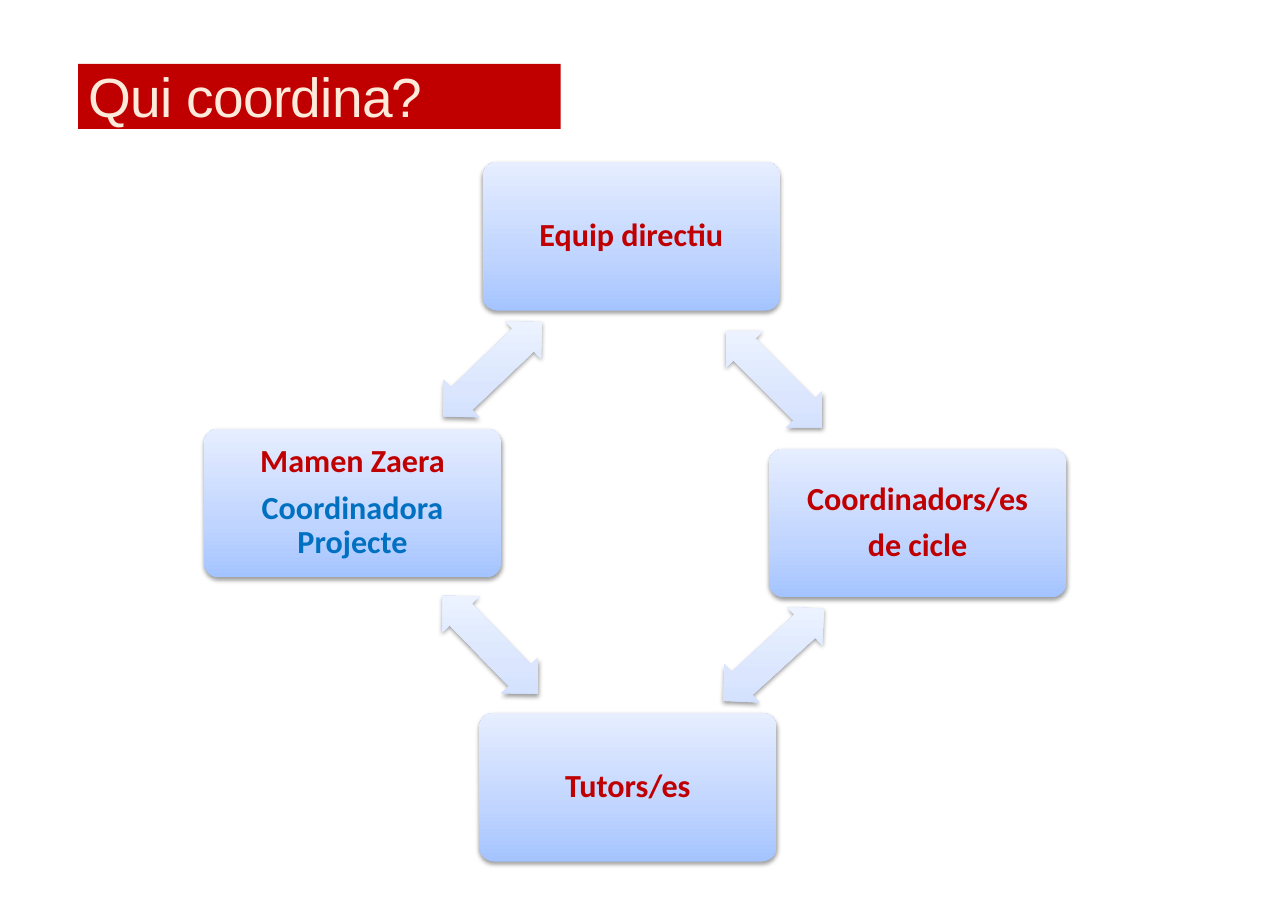
from lxml.etree import SubElement
from pptx import Presentation
from pptx.dml.color import RGBColor as Rgb
from pptx.enum.shapes import MSO_SHAPE as Preset
from pptx.enum.text import MSO_ANCHOR as Anchor, MSO_AUTO_SIZE as AutoSize, PP_ALIGN as Align
from pptx.oxml.ns import qn
from pptx.util import Cm, Pt

COLORS = {"red": "C00000", "cream": "FDEADA", "blue": "0070C0", "shadow": "000000"}
# Gradient stops, from the bottom edge to the top
ROLE_STOPS = {0: "A4C4FF", 35: "BFD4FF", 100: "E6EEFF"}
LINK_STOPS = {0: "CDDDFE", 35: "DBE6FE", 100: "F0F5FF"}


class CoordinationSlide:
    role_size = Cm(6.86), Cm(3.43)
    link_size = Cm(3.15), Cm(1.19)

    def __init__(self, deck):
        self.slide = deck.slides.add_slide(deck.slide_layouts[5])

    def add_words(self, paragraph, text, font, size, color, bold=False):
        run = paragraph.add_run()
        run.text = text
        run.font.name, run.font.size, run.font.bold = font, Pt(size), bold
        run.font.color.rgb = Rgb.from_string(COLORS[color])
        return run

    def title(self, text):
        title = self.slide.shapes.title
        title.left, title.top, title.width, title.height = Cm(1.8), Cm(1.47), Cm(11.13), Cm(1.5)
        title.fill.solid()
        title.fill.fore_color.rgb = Rgb.from_string(COLORS["red"])
        frame = title.text_frame
        frame.auto_size, frame.vertical_anchor = AutoSize.NONE, Anchor.TOP
        frame.margin_left = Cm(0.25)
        frame.margin_top = frame.margin_right = frame.margin_bottom = 0
        heading = frame.paragraphs[0]
        heading.alignment, heading.line_spacing = Align.LEFT, Pt(42.2)
        run = self.add_words(heading, text, "Arial", 36, "cream")
        run._r.get_or_add_rPr().set("spc", "-50")

    def glossy(self, preset, left, top, size, stops):
        """Add a shape with a vertical gradient and a soft shadow below."""
        shape = self.slide.shapes.add_shape(preset, Cm(left), Cm(top), *size)
        shape.line.fill.background()
        shape.fill.gradient()
        shape.fill.gradient_angle = 90
        gradient = shape._element.spPr.find(qn("a:gradFill"))
        gradient.set("rotWithShape", "0")
        stop_list = gradient.find(qn("a:gsLst"))
        for old_stop in list(stop_list):
            stop_list.remove(old_stop)
        for percent, color in stops.items():
            stop = SubElement(stop_list, qn("a:gs"), pos=str(percent * 1000))
            SubElement(stop, qn("a:srgbClr"), val=color)
        shape.shadow.inherit = False
        effects = shape._element.spPr.find(qn("a:effectLst"))
        shadow = SubElement(effects, qn("a:outerShdw"), blurRad=str(Pt(3.1)),
                            dist=str(Pt(1.6)), dir="5400000", rotWithShape="0")
        shade = SubElement(shadow, qn("a:srgbClr"), val=COLORS["shadow"])
        SubElement(shade, qn("a:alpha"), val="38000")
        return shape

    def role(self, left, top, lines):
        box = self.glossy(Preset.ROUNDED_RECTANGLE, left, top, self.role_size, ROLE_STOPS)
        box.adjustments[0] = 0.1
        frame = box.text_frame
        frame.word_wrap, frame.vertical_anchor = True, Anchor.MIDDLE
        frame.margin_left = frame.margin_right = Cm(0.23)
        frame.margin_top = frame.margin_bottom = Cm(0.23)
        for number, (text, color) in enumerate(lines):
            line = frame.add_paragraph() if number else frame.paragraphs[0]
            line.alignment, line.line_spacing, line.space_after = Align.CENTER, 0.9, Pt(7.5)
            self.add_words(line, text, "Calibri", 21, color, bold=True)

    def link(self, left, top, angle):
        arrow = self.glossy(Preset.LEFT_RIGHT_ARROW, left, top, self.link_size, LINK_STOPS)
        arrow.adjustments[0], arrow.adjustments[1] = 0.6, 0.5
        arrow.rotation = angle


def main():
    deck = Presentation()
    deck.slide_width, deck.slide_height = Cm(29.7), Cm(21)
    page = CoordinationSlide(deck)
    page.title("Qui coordina?")

    # Roles, clockwise from the top
    page.role(11.13, 3.73, [("Equip directiu", "red")])
    page.role(17.73, 10.34, [("Coordinadors/es", "red"), ("de cicle", "red")])
    page.role(11.05, 16.43, [("Tutors/es", "red")])
    page.role(4.7, 9.88, [("Mamen Zaera", "red"), ("Coordinadora Projecte", "blue")])

    # Two-way arrows between neighbouring roles
    for left, top, angle in [(16.28, 8.15, 45), (16.26, 14.5, 137.6),
                             (9.73, 14.27, 225.9), (9.78, 7.92, 316.4)]:
        page.link(left, top, angle)

    deck.save("out.pptx")


if __name__ == "__main__":
    main()
